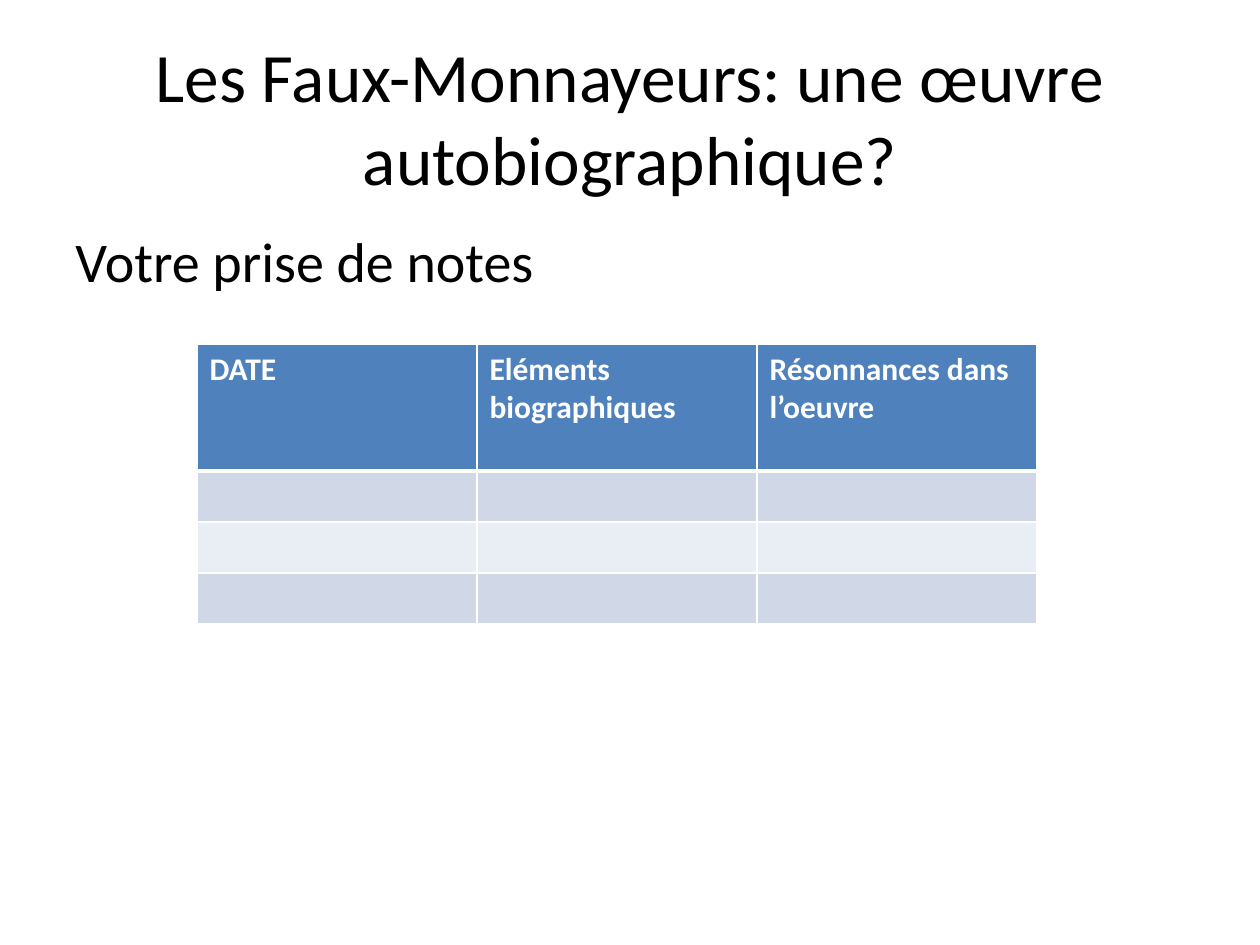
from pptx import Presentation
from pptx.dml.color import RGBColor
from pptx.enum.text import MSO_ANCHOR, PP_ALIGN
from pptx.oxml.ns import qn
from pptx.util import Emu, Pt
from lxml import etree

CENTER, LEFT = PP_ALIGN.CENTER, PP_ALIGN.LEFT
MIDDLE, TOP = MSO_ANCHOR.MIDDLE, MSO_ANCHOR.TOP
FONT = "Calibri"
BLACK, WHITE, BLUE = "000000", "FFFFFF", "4F81BD"
BANDS = ["D0D8E8", "E9EDF4"]

# Content: text, box in px, size, alignment, anchor
TEXTS = [
    ("Les Faux-Monnayeurs: une œuvre autobiographique?",
     (63, 38, 1134, 157), 39.6, CENTER, MIDDLE),
    ("Votre prise de notes", (63, 220, 1134, 624), 32, LEFT, TOP),
]
HEADERS = ["DATE", "Eléments biographiques", "Résonnances dans l’oeuvre"]
EMPTY_ROWS = 3
TABLE_LEFT, TABLE_TOP, COL_W = 197, 344, 280
HEADER_H, ROW_H = 127, 51


def px(n):
    return Emu(n * 914400 // 126)


def color(value):
    return RGBColor.from_string(value)


def style(p, size, hex_color, bold=False):
    p.font.name = FONT
    p.font.size = Pt(size)
    p.font.bold = bold
    p.font.color.rgb = color(hex_color)


def add_borders(cell, bottom):
    tc_pr = cell._tc.get_or_add_tcPr()
    widths = {"a:lnL": 1, "a:lnR": 1, "a:lnT": 1, "a:lnB": bottom}
    for i, (tag, width) in enumerate(widths.items()):
        ln = etree.Element(qn(tag), w=str(Pt(width)))
        fill = etree.SubElement(ln, qn("a:solidFill"))
        etree.SubElement(fill, qn("a:srgbClr"), val=WHITE)
        tc_pr.insert(i, ln)  # borders come before the fill


prs = Presentation()
prs.slide_width, prs.slide_height = px(1260), px(945)
s = prs.slides.add_slide(prs.slide_layouts[6])

# Title and subtitle
for text, box, size, align, anchor in TEXTS:
    tf = s.shapes.add_textbox(*map(px, box)).text_frame
    tf.word_wrap = True
    tf.vertical_anchor = anchor
    p = tf.paragraphs[0]
    p.text = text
    p.alignment = align
    style(p, size, BLACK)

# Notes table
rows = [HEADERS] + [[""] * len(HEADERS)] * EMPTY_ROWS
heights = [HEADER_H] + [ROW_H] * EMPTY_ROWS
table = s.shapes.add_table(
    len(rows), len(HEADERS), px(TABLE_LEFT), px(TABLE_TOP),
    px(COL_W * len(HEADERS)), px(sum(heights))).table
for col in table.columns:
    col.width = px(COL_W)
for r, (texts, height) in enumerate(zip(rows, heights)):
    table.rows[r].height = px(height)
    header = r == 0
    for c, text in enumerate(texts):
        cell = table.cell(r, c)
        cell.fill.solid()
        cell.fill.fore_color.rgb = color(BLUE if header else BANDS[(r - 1) % 2])
        add_borders(cell, 3 if header else 1)
        p = cell.text_frame.paragraphs[0]
        p.text = text
        style(p, 18, WHITE if header else BLACK, header)

prs.save("out.pptx")
